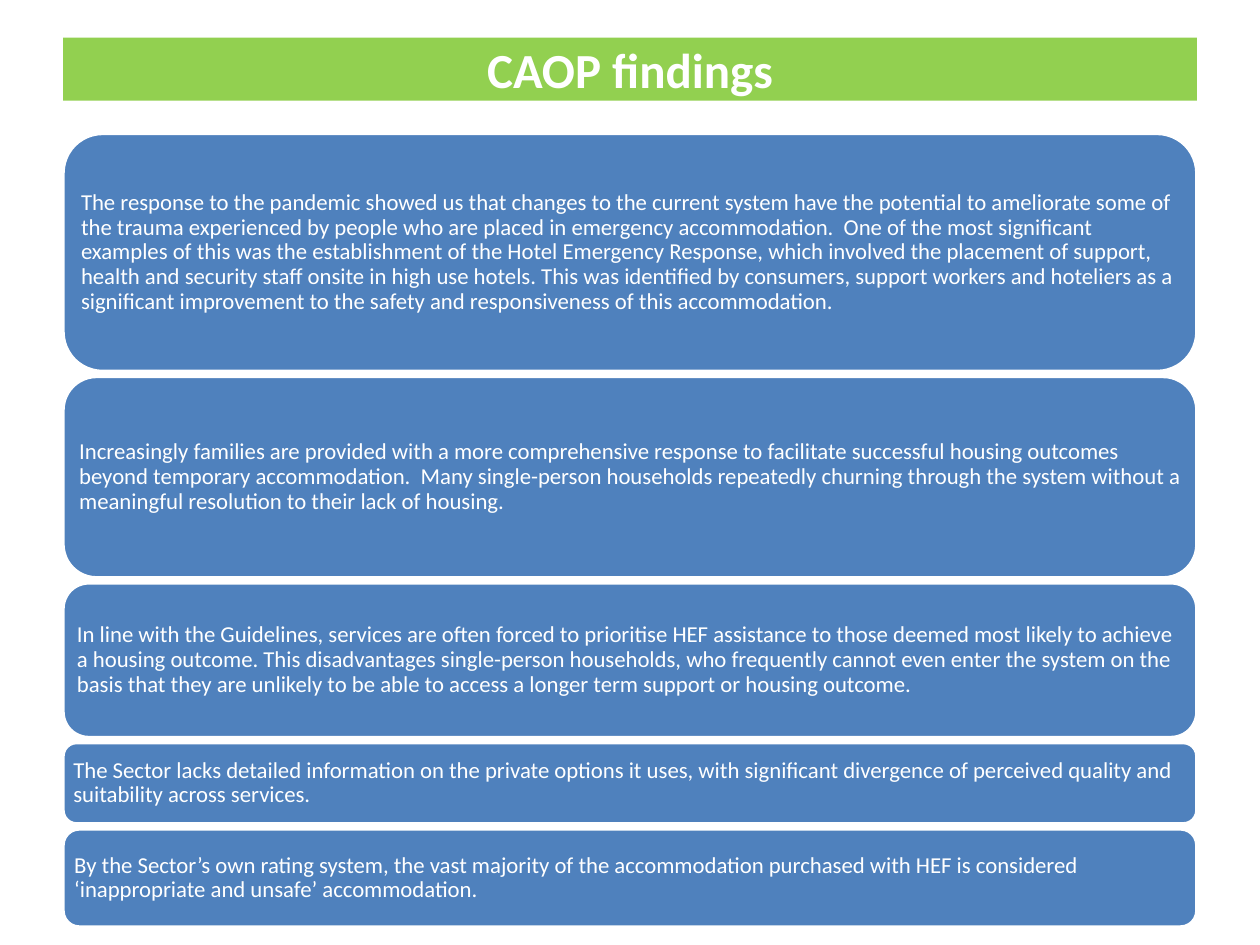
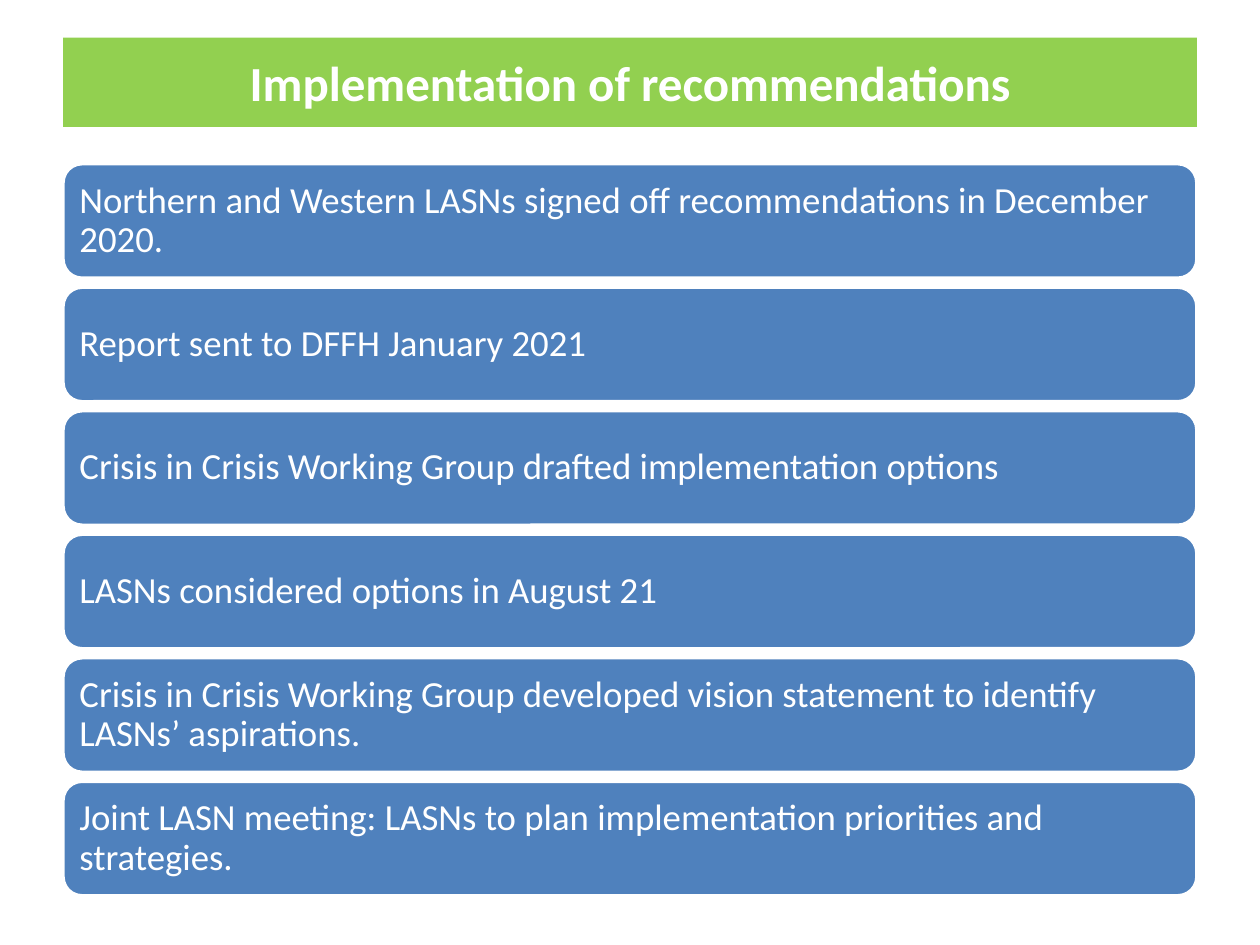
"""Builds two slides of findings and recommendations as stacked rounded panels."""
import pptx
import pptx.dml.color
import pptx.enum.shapes
import pptx.enum.text
import pptx.util

Cm = pptx.util.Cm
Pt = pptx.util.Pt
ALIGN = pptx.enum.text.PP_ALIGN
COLOURS = {"title": "92D050", "panel": "4F81BD", "white": "FFFFFF"}
LEFT, WIDTH, TITLE_TOP = 1.27, 22.86, 0.76

FINDINGS = [
    (4.8, "The response to the pandemic showed us that changes to the current system have the "
          "potential to ameliorate some of the trauma experienced by people who are placed in "
          "emergency accommodation.  One of the most significant examples of this was the "
          "establishment of the Hotel Emergency Response, which involved the placement of support, "
          "health and security staff onsite in high use hotels. This was identified by consumers, "
          "support workers and hoteliers as a significant improvement to the safety and "
          "responsiveness of this accommodation."),
    (4.06, "Increasingly families are provided with a more comprehensive response to facilitate "
           "successful housing outcomes beyond temporary accommodation.  Many single-person "
           "households repeatedly churning through the system without a meaningful resolution to "
           "their lack of housing."),
    (3.12, "In line with the Guidelines, services are often forced to prioritise HEF assistance to "
           "those deemed most likely to achieve a housing outcome. This disadvantages single-person "
           "households, who frequently cannot even enter the system on the basis that they are "
           "unlikely to be able to access a longer term support or housing outcome."),
    (1.64, "The Sector lacks detailed information on the private options it uses, with significant "
           "divergence of perceived quality and suitability across services."),
    (1.98, "By the Sector’s own rating system, the vast majority of the accommodation purchased "
           "with HEF is considered ‘inappropriate and unsafe’ accommodation."),
]
STEP_HEIGHT = 2.31
STEPS = [
    "Northern and Western LASNs signed off recommendations in December 2020.",
    "Report sent to DFFH January 2021",
    "Crisis in Crisis Working Group drafted implementation options",
    "LASNs considered options in August 21",
    "Crisis in Crisis Working Group developed vision statement to identify LASNs’ aspirations.",
    "Joint LASN meeting: LASNs to plan implementation priorities and strategies.",
]


def colour(name):
    return pptx.dml.color.RGBColor.from_string(COLOURS[name])


def set_values(target, values):
    for name, value in values.items():
        setattr(target, name, value)


class Deck:
    def __init__(self):
        self.presentation = pptx.Presentation()
        set_values(self.presentation, {"slide_width": Cm(25.4), "slide_height": Cm(19.05)})
        self.slide = None

    def fill_shape(self, shape, name):
        shape.fill.solid()
        shape.fill.fore_color.rgb = colour(name)

    def set_text(self, shape, text, size, paragraph_format, bold=False, frame_format=None):
        frame = shape.text_frame
        frame.text = text
        set_values(frame, {"word_wrap": True,
                           "auto_size": pptx.enum.text.MSO_AUTO_SIZE.NONE,
                           "vertical_anchor": pptx.enum.text.MSO_ANCHOR.MIDDLE,
                           **(frame_format or {})})
        paragraph = frame.paragraphs[0]
        set_values(paragraph, paragraph_format)
        font = paragraph.runs[0].font
        set_values(font, {"name": "Calibri", "size": Pt(size), "bold": bold})
        font.color.rgb = colour("white")

    def add_slide(self, title_text, title_height):
        layout = self.presentation.slide_layouts.get_by_name("Title Only")
        self.slide = self.presentation.slides.add_slide(layout)
        title = self.slide.shapes.title
        set_values(title, {"left": Cm(LEFT), "top": Cm(TITLE_TOP),
                           "width": Cm(WIDTH), "height": Cm(title_height)})
        self.fill_shape(title, "title")
        self.set_text(title, title_text, 28, {"alignment": ALIGN.CENTER}, bold=True)

    def add_panel(self, text, top, height, size, margin):
        panel = self.slide.shapes.add_shape(
            pptx.enum.shapes.MSO_SHAPE.ROUNDED_RECTANGLE,
            Cm(LEFT), Cm(top), Cm(WIDTH), Cm(height))
        panel.shadow.inherit = False
        self.fill_shape(panel, "panel")
        panel.line.color.rgb = colour("white")
        panel.line.width = Pt(2)
        margins = {f"margin_{side}": Cm(margin) for side in ("left", "top", "right", "bottom")}
        self.set_text(panel, text, size, {"alignment": ALIGN.LEFT, "line_spacing": 0.9},
                      frame_format=margins)

    def add_stack(self, items, top, gap, size, margin):
        for height, text in items:
            self.add_panel(text, top, height, size, margin)
            top += height + gap


def main():
    deck = Deck()
    deck.add_slide("CAOP findings", 1.27)
    deck.add_stack(FINDINGS, top=2.69, gap=0.1, size=13, margin=0.13)
    deck.add_slide("Implementation of recommendations", 1.8)
    deck.add_stack([(STEP_HEIGHT, step) for step in STEPS], top=3.3, gap=0.18, size=21, margin=0.22)
    deck.presentation.save("out.pptx")


if __name__ == "__main__":
    main()
